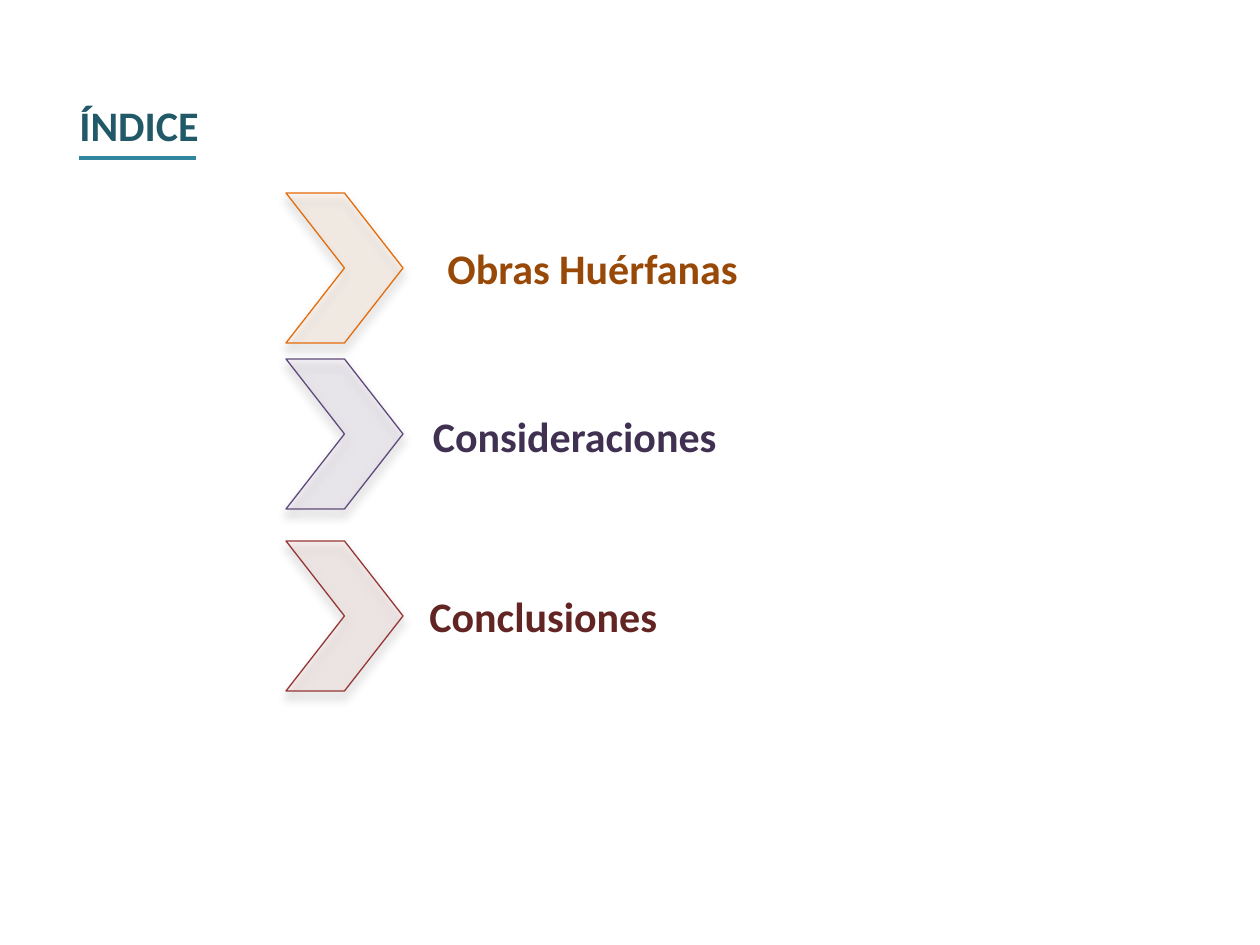
import pptx
import pptx.util
import pptx.oxml
import pptx.oxml.ns
import pptx.dml.color
import pptx.enum.shapes
import pptx.enum.text
from lxml import etree

PX = 914400 // 126
PT = 12700
FONT = "Calibri"
COLORS = {
    "title": "215968",
    "rule": "31859C",
    "shadow": "000000",
    "orange_fill": "FCD5B5", "orange_line": "E46C0A", "orange_text": "984807",
    "purple_fill": "CCC1DA", "purple_line": "604A7B", "purple_text": "403152",
    "red_fill": "E6B9B8", "red_line": "953735", "red_text": "632523",
}
LEFT = pptx.enum.text.PP_ALIGN.LEFT
RIGHT = pptx.enum.text.PP_ALIGN.RIGHT

CHEVRON_LEFT, CHEVRON_WIDTH, CHEVRON_HEIGHT = 286, 117, 150
LABEL_HEIGHT = 97
# wording, palette, chevron top, label left, label top, label width, alignment
ENTRIES = [
    ("Obras Huérfanas", "orange", 193, 435, 219, 558, LEFT),
    ("Consideraciones", "purple", 359, 141, 387, 588, RIGHT),
    ("Conclusiones", "red", 541, 417, 567, 635, LEFT),
]


def px(*lengths):
    return [pptx.util.Emu(length * PX) for length in lengths]


def rgb(key):
    return pptx.dml.color.RGBColor.from_string(COLORS[key])


def add_alpha(color_element, percent):
    alpha = etree.SubElement(color_element, pptx.oxml.ns.qn("a:alpha"))
    alpha.set("val", str(percent * 1000))


def add_label(slide, text, color, box, align=LEFT):
    frame = slide.shapes.add_textbox(*px(*box)).text_frame
    frame.word_wrap = True
    frame.vertical_anchor = pptx.enum.text.MSO_ANCHOR.MIDDLE
    frame.text = text
    paragraph = frame.paragraphs[0]
    paragraph.alignment = align
    font = paragraph.runs[0].font
    font.name, font.size, font.bold = FONT, pptx.util.Pt(24), True
    font.color.rgb = rgb(color)


def add_rule(slide, start_x, end_x, y):
    rule = slide.shapes.add_connector(
        pptx.enum.shapes.MSO_CONNECTOR.STRAIGHT, *px(start_x, y, end_x, y))
    rule.line.color.rgb = rgb("rule")
    rule.line.width = pptx.util.Pt(2)
    etree.SubElement(rule.element.spPr, pptx.oxml.ns.qn("a:effectLst"))


def add_chevron(slide, palette, top):
    chevron = slide.shapes.add_shape(
        pptx.enum.shapes.MSO_SHAPE.CHEVRON,
        *px(CHEVRON_LEFT, top, CHEVRON_WIDTH, CHEVRON_HEIGHT))
    chevron.fill.solid()
    chevron.fill.fore_color.rgb = rgb(palette + "_fill")
    properties = chevron.element.spPr
    add_alpha(properties.find(".//" + pptx.oxml.ns.qn("a:srgbClr")), 20)
    chevron.line.color.rgb = rgb(palette + "_line")
    chevron.line.width = pptx.util.Pt(0.75)

    # Soft shadow falling straight down
    chevron.shadow.inherit = False
    effects = properties.find(pptx.oxml.ns.qn("a:effectLst"))
    shadow = etree.SubElement(
        effects, pptx.oxml.ns.qn("a:outerShdw"), blurRad=str(int(5.5 * PT)),
        dist=str(4 * PT), dir=str(90 * 60000), rotWithShape="0")
    shadow_color = etree.SubElement(
        shadow, pptx.oxml.ns.qn("a:srgbClr"), val=COLORS["shadow"])
    add_alpha(shadow_color, 35)


def main():
    presentation = pptx.Presentation()
    presentation.slide_width = pptx.util.Inches(10)
    presentation.slide_height = pptx.util.Inches(7.5)
    slide = presentation.slides.add_slide(presentation.slide_layouts[6])

    # Heading
    add_label(slide, "ÍNDICE", "title", (67, 76, 149, LABEL_HEIGHT))
    add_rule(slide, 79, 196, 158)

    # Index entries
    for text, palette, chevron_top, left, top, width, align in ENTRIES:
        add_chevron(slide, palette, chevron_top)
        add_label(slide, text, palette + "_text",
                  (left, top, width, LABEL_HEIGHT), align)

    presentation.save("out.pptx")


if __name__ == "__main__":
    main()
